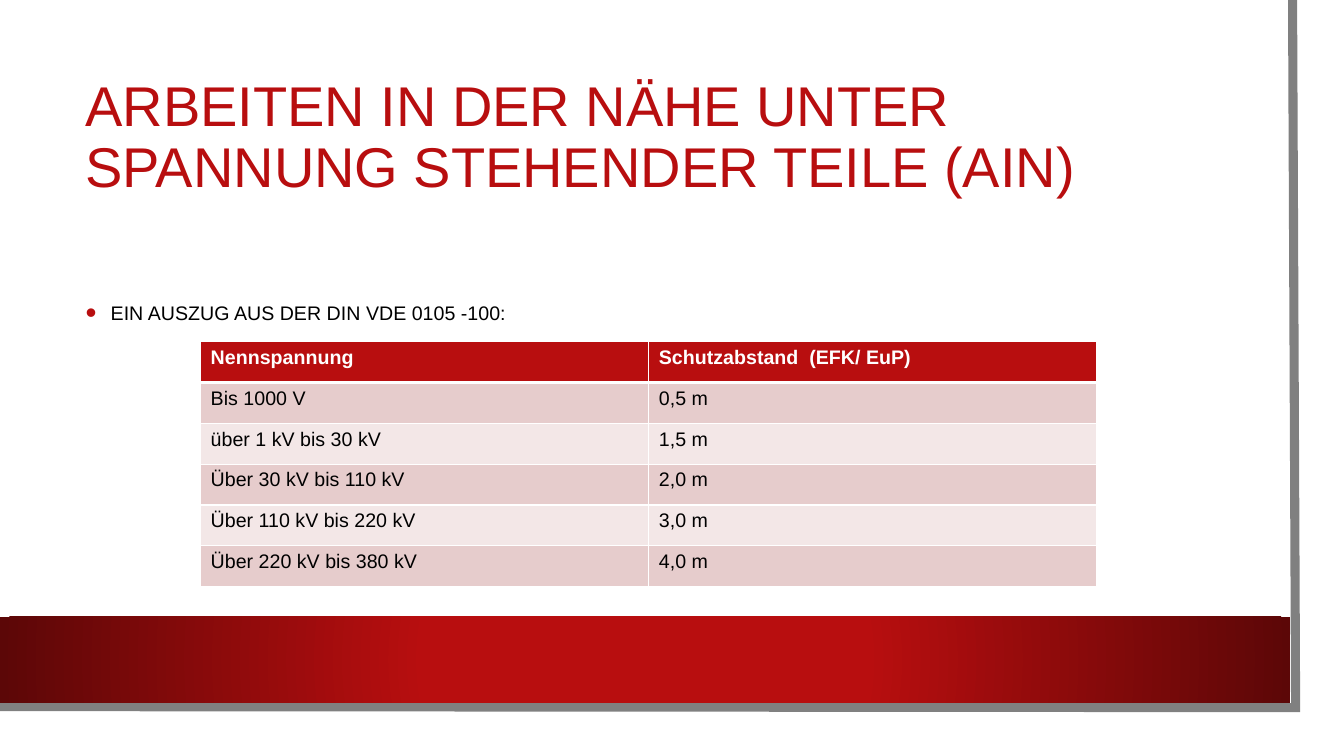
from lxml.etree import SubElement
from pptx import Presentation
from pptx.dml.color import RGBColor
from pptx.enum.shapes import MSO_SHAPE
from pptx.enum.text import MSO_ANCHOR
from pptx.oxml import parse_xml
from pptx.oxml.ns import nsdecls, qn
from pptx.util import Inches, Pt

COLORS = {"red": "B80E0F", "dark_red": "5C0707", "white": "FFFFFF", "black": "000000",
          "gray": "808080", "dark_band": "E6CCCC", "light_band": "F3E7E7"}
CLEARANCES = [
    ("Nennspannung", "Schutzabstand  (EFK/ EuP)"),
    ("Bis 1000 V", "0,5 m"),
    ("über 1 kV bis 30 kV", "1,5 m"),
    ("Über 30 kV bis 110 kV", "2,0 m"),
    ("Über 110 kV bis 220 kV", "3,0 m"),
    ("Über 220 kV bis 380 kV", "4,0 m"),
]


def rgb(name):
    """Return the named colour."""
    return RGBColor.from_string(COLORS[name])


def write_text(frame, text, size=14, color="black", bold=False, line_spacing=None, bullet=None):
    """Write one formatted paragraph into a text frame."""
    paragraph = frame.paragraphs[0]
    if bullet:
        properties = paragraph._p.get_or_add_pPr()
        properties.set("marL", str(Inches(0.25)))
        properties.set("indent", str(-Inches(0.25)))
        bullet_color = SubElement(properties, qn("a:buClr"))
        SubElement(bullet_color, qn("a:srgbClr"), val=COLORS["red"])
        SubElement(properties, qn("a:buSzPct"), val="160000")
        SubElement(properties, qn("a:buFont"), typeface="Arial")
        SubElement(properties, qn("a:buChar"), char=bullet)
    if line_spacing:
        paragraph.line_spacing = line_spacing
    run = paragraph.add_run()
    run.text = text
    run.font.name = "Arial"
    run.font.size = Pt(size)
    run.font.bold = bold
    run.font.color.rgb = rgb(color)


def add_text(slide, left, top, width, height, text, **text_format):
    """Add a wrapped, vertically centred text box."""
    box = slide.shapes.add_textbox(Inches(left), Inches(top), Inches(width), Inches(height))
    box.text_frame.word_wrap = True
    box.text_frame.vertical_anchor = MSO_ANCHOR.MIDDLE
    write_text(box.text_frame, text, **text_format)


def add_rectangle(slide, left, top, width, height):
    """Add a white rectangle without outline."""
    shape = slide.shapes.add_shape(MSO_SHAPE.RECTANGLE, Inches(left), Inches(top),
                                   Inches(width), Inches(height))
    shape.shadow.inherit = False
    shape.fill.solid()
    shape.fill.fore_color.rgb = rgb("white")
    shape.line.fill.background()
    return shape


def add_frame(slide, left, top, width, height):
    """Add the sheet, its grey edge and the red band at its foot."""
    add_rectangle(slide, left, top, width, height)
    right, bottom = left + width - 0.25, top + height - 0.25
    builder = slide.shapes.build_freeform(Inches(right - 0.03), Inches(top), scale=1.0)
    builder.add_line_segments([(Inches(right), Inches(bottom)),
                               (Inches(left - 0.03), Inches(bottom - 0.01))], close=False)
    edge = builder.convert_to_shape()
    edge.shadow.inherit = False
    edge.fill.background()
    edge.line.color.rgb = rgb("gray")
    edge.line.width = Pt(6.5)
    SubElement(edge.line._get_or_add_ln(), qn("a:miter"), lim="800000")

    band = add_rectangle(slide, left, bottom - 0.9, width - 0.3, 0.85)
    solid_fill = band._element.spPr.find(qn("a:solidFill"))
    gradient = parse_xml(
        f'<a:gradFill {nsdecls("a")} rotWithShape="1"><a:gsLst>'
        f'<a:gs pos="34000"><a:srgbClr val="{COLORS["red"]}"/></a:gs>'
        f'<a:gs pos="100000"><a:srgbClr val="{COLORS["dark_red"]}"/></a:gs></a:gsLst>'
        '<a:path path="circle"><a:fillToRect l="50000" t="50000" r="50000" b="50000"/>'
        '</a:path></a:gradFill>')
    band._element.spPr.replace(solid_fill, gradient)


def set_borders(cell, bottom_width):
    """Draw white borders on all four sides of a cell."""
    properties = cell._tc.get_or_add_tcPr()
    for index, side in enumerate(("lnL", "lnR", "lnT", "lnB")):
        width = bottom_width if side == "lnB" else 1
        border = parse_xml(
            f'<a:{side} {nsdecls("a")} w="{Pt(width)}"><a:solidFill>'
            f'<a:srgbClr val="{COLORS["white"]}"/></a:solidFill></a:{side}>')
        properties.insert(index, border)


def add_clearance_table(slide, left, top, width, height):
    """Add the table of voltages and safety clearances."""
    table = slide.shapes.add_table(len(CLEARANCES), 2, Inches(left), Inches(top),
                                   Inches(width), Inches(height)).table
    for row_index, texts in enumerate(CLEARANCES):
        header = row_index == 0
        band = "dark_band" if row_index % 2 else "light_band"
        for column_index, text in enumerate(texts):
            cell = table.cell(row_index, column_index)
            cell.fill.solid()
            cell.fill.fore_color.rgb = rgb("red" if header else band)
            set_borders(cell, 3 if header else 1)
            write_text(cell.text_frame, text, bold=header, color="white" if header else "black")


def main():
    """Build and save the slide."""
    presentation = Presentation()
    presentation.slide_width = Inches(13.33)
    presentation.slide_height = Inches(7.5)
    slide = presentation.slides.add_slide(presentation.slide_layouts[6])
    add_frame(slide, 0, 0, 13.1, 7.27)
    add_text(slide, 0.75, 0.75, 11.37, 1.26,
             "ARBEITEN IN DER NÄHE UNTER SPANNUNG STEHENDER TEILE (AIN)",
             size=40, color="red", line_spacing=0.9)
    add_text(slide, 0.75, 2.26, 11.37, 1.63, "EIN AUSZUG AUS DER DIN VDE 0105 -100:",
             line_spacing=1.2, bullet="•")
    add_clearance_table(slide, 1.99, 3.39, 8.89, 2.43)
    presentation.save("out.pptx")


if __name__ == "__main__":
    main()
